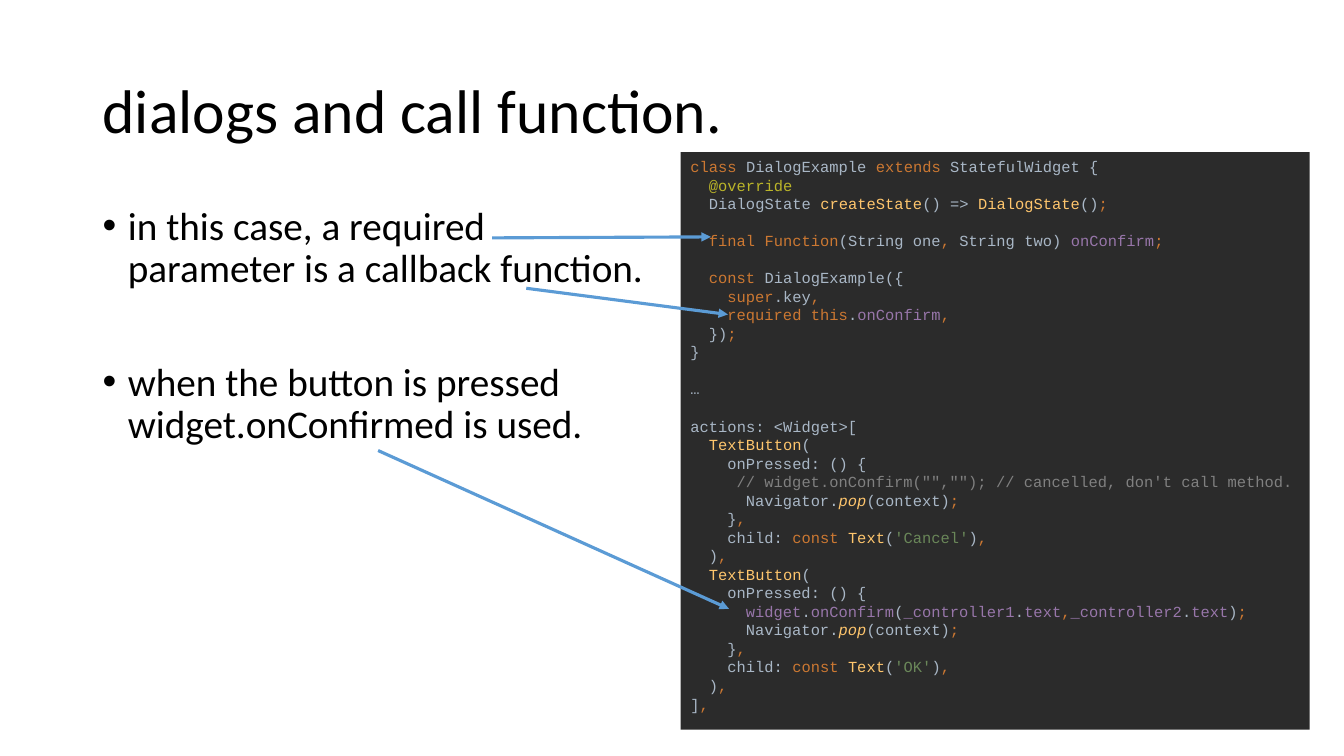
import pptx
import pptx.util
import pptx.dml.color
import pptx.enum.shapes
import pptx.enum.text
import pptx.oxml
import pptx.oxml.ns
from dataclasses import dataclass, field

Inches, Pt = pptx.util.Inches, pptx.util.Pt
ANCHOR = pptx.enum.text.MSO_ANCHOR


@dataclass
class Theme:
    text_font: str = "Calibri"
    code_font: str = "Courier New"
    title_size: float = 44
    body_size: float = 28
    code_size: float = 11
    code_pitch: float = 13.25
    text: str = "000000"
    panel: str = "2B2B2B"
    arrow: str = "5B9BD5"
    syntax: dict = field(default_factory=lambda: {
        "key": "CC7832", "plain": "A9B7C6", "note": "BBB529",
        "call": "FFC66D", "method": "FFC66D", "member": "9876AA",
        "comment": "808080", "string": "6A8759"})


THEME = Theme()

BULLETS = ["in this case, a required parameter is a callback function.",
           "when the button is pressed widget.onConfirmed is used."]

# Arrows as (start, end) points
ARROWS = [((4.88, 2.36), (7.05, 2.35)),
          ((5.22, 2.86), (7.22, 3.12)),
          ((3.75, 4.47), (7.23, 6.04))]


def button(label, depth, action):
    """Code lines of one TextButton with its pressed action."""
    return [
        (2, 0, [("call", "TextButton"), ("plain", "(")]),
        (4, 0, [("plain", "onPressed: () {")]),
        (depth, 0, action),
        (6, 0, [("plain", "Navigator."), ("method", "pop"),
                ("plain", "(context)"), ("key", ";")]),
        (4, 0, [("plain", "}"), ("key", ",")]),
        (4, 0, [("plain", "child: "), ("key", "const "), ("call", "Text"),
                ("plain", "("), ("string", label), ("plain", ")"),
                ("key", ",")]),
        (2, 0, [("plain", ")"), ("key", ",")]),
    ]


# Each code line: indent in characters, empty lines above, coloured pieces
CODE = [
    (0, 0, [("key", "class "), ("plain", "DialogExample "),
            ("key", "extends "), ("plain", "StatefulWidget {")]),
    (2, 0, [("note", "@override")]),
    (2, 0, [("plain", "DialogState "), ("call", "createState"),
            ("plain", "() => "), ("call", "DialogState"), ("plain", "()"),
            ("key", ";")]),
    (2, 1, [("key", "final Function"), ("plain", "(String one"),
            ("key", ", "), ("plain", "String two) "),
            ("member", "onConfirm"), ("key", ";")]),
    (2, 1, [("key", "const "), ("plain", "DialogExample({")]),
    (4, 0, [("key", "super"), ("plain", ".key"), ("key", ",")]),
    (4, 0, [("key", "required this"), ("plain", "."),
            ("member", "onConfirm"), ("key", ",")]),
    (2, 0, [("plain", "})"), ("key", ";")]),
    (0, 0, [("plain", "}")]),
    (0, 1, [("plain", "…")]),
    (0, 1, [("plain", "actions: <Widget>[")]),
    *button("'Cancel'", 5, [
        ("comment", "// widget.onConfirm(\"\",\"\"); "
                    "// cancelled, don't call method.")]),
    *button("'OK'", 6, [
        ("member", "widget"), ("plain", "."), ("member", "onConfirm"),
        ("plain", "("), ("member", "_controller1"), ("plain", "."),
        ("member", "text"), ("key", ","), ("member", "_controller2"),
        ("plain", "."), ("member", "text"), ("plain", ")"), ("key", ";")]),
    (0, 0, [("plain", "]"), ("key", ",")]),
]


def rgb(value):
    return pptx.dml.color.RGBColor.from_string(value)


def style(r, font, size, color):
    r.font.name = font
    r.font.size = Pt(size)
    r.font.color.rgb = rgb(color)


def indent(p, left, first=0):
    pPr = p._p.get_or_add_pPr()
    pPr.set("marL", str(int(left)))
    pPr.set("indent", str(int(first)))
    return pPr


def add_title(s, box, text):
    tf = s.shapes.add_textbox(*map(Inches, box)).text_frame
    tf.word_wrap = True
    tf.vertical_anchor = ANCHOR.MIDDLE
    tf.text = text
    p = tf.paragraphs[0]
    p.line_spacing = 0.9
    style(p.runs[0], THEME.text_font, THEME.title_size, THEME.text)


def add_bullets(s, box, items):
    tf = s.shapes.add_textbox(*map(Inches, box)).text_frame
    tf.word_wrap = True
    for i, item in enumerate(items):
        p = tf.add_paragraph() if i else tf.paragraphs[0]
        p.text = item
        p.line_spacing = 0.9
        p.space_before = Pt(51 if i else 10)
        style(p.runs[0], THEME.text_font, THEME.body_size, THEME.text)
        pPr = indent(p, Inches(0.25), -Inches(0.25))
        ns = pptx.oxml.ns.nsdecls("a")
        for xml in (f'<a:buFont {ns} typeface="Arial"/>',
                    f'<a:buChar {ns} char="•"/>'):
            pPr.append(pptx.oxml.parse_xml(xml))


def add_code(s, box, lines):
    sp = s.shapes.add_shape(pptx.enum.shapes.MSO_SHAPE.RECTANGLE,
                            *map(Inches, box))
    sp.shadow.inherit = False
    sp.fill.solid()
    sp.fill.fore_color.rgb = rgb(THEME.panel)
    sp.line.fill.background()
    tf = sp.text_frame
    tf.word_wrap = False
    tf.vertical_anchor = ANCHOR.TOP
    char_width = Pt(THEME.code_size * 0.6)
    for i, (depth, gap, pieces) in enumerate(lines):
        p = tf.add_paragraph() if i else tf.paragraphs[0]
        p.alignment = pptx.enum.text.PP_ALIGN.LEFT
        p.line_spacing = Pt(THEME.code_pitch)
        p.space_before = Pt(gap * THEME.code_pitch)
        indent(p, depth * char_width)
        for role, text in pieces:
            r = p.add_run()
            r.text = text
            style(r, THEME.code_font, THEME.code_size, THEME.syntax[role])
            r.font.italic = role == "method"


def add_arrow(s, start, end):
    c = s.shapes.add_connector(pptx.enum.shapes.MSO_CONNECTOR.STRAIGHT,
                               *map(Inches, start + end))
    c.line.color.rgb = rgb(THEME.arrow)
    c.line.width = Pt(2.25)
    ns = pptx.oxml.ns.nsdecls("a")
    c.line._get_or_add_ln().append(
        pptx.oxml.parse_xml(f'<a:tailEnd {ns} type="triangle"/>'))
    c._element.spPr.append(pptx.oxml.parse_xml(f'<a:effectLst {ns}/>'))


def main():
    prs = pptx.Presentation()
    prs.slide_width, prs.slide_height = Inches(13.33), Inches(7.5)
    s = prs.slides.add_slide(prs.slide_layouts[6])
    add_title(s, (0.92, 0.4, 11.5, 1.45), "dialogs and call function.")
    add_bullets(s, (0.92, 2, 5.67, 4.76), BULLETS)
    add_code(s, (6.75, 1.51, 6.24, 5.73), CODE)
    for start, end in ARROWS:
        add_arrow(s, start, end)
    prs.save("out.pptx")


if __name__ == "__main__":
    main()
